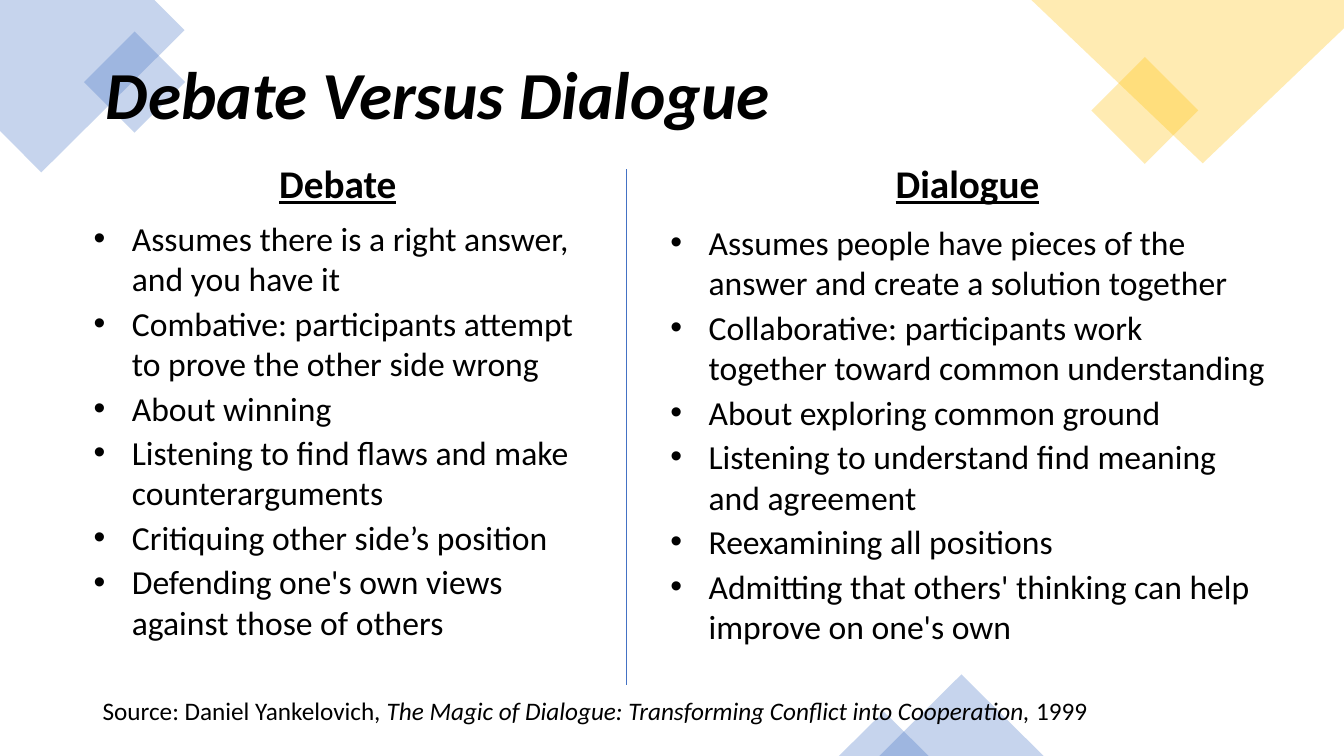
from dataclasses import dataclass

from lxml import etree
from pptx import Presentation
from pptx.dml.color import RGBColor
from pptx.enum.shapes import MSO_CONNECTOR, MSO_SHAPE
from pptx.enum.text import MSO_ANCHOR, MSO_AUTO_SIZE, PP_ALIGN
from pptx.oxml.ns import qn
from pptx.util import Inches, Pt

RECTANGLE = MSO_SHAPE.RECTANGLE
TRIANGLE = MSO_SHAPE.ISOSCELES_TRIANGLE
STRAIGHT = MSO_CONNECTOR.STRAIGHT
MIDDLE = MSO_ANCHOR.MIDDLE
GROW = MSO_AUTO_SIZE.SHAPE_TO_FIT_TEXT
FIXED = MSO_AUTO_SIZE.NONE
LEFT = PP_ALIGN.LEFT
CENTER = PP_ALIGN.CENTER

FONT = "Calibri"
BLACK = "000000"
BLUE = "4472C4"
GOLD = "FFC000"
OPACITY = 30
INDENT = Inches(0.38)

DEBATE = [
    "Assumes there is a right answer, and you have it",
    "Combative: participants attempt to prove the other side wrong",
    "About winning",
    "Listening to find flaws and make counterarguments",
    "Critiquing other side’s position",
    "Defending one's own views against those of others",
]
DIALOGUE = [
    "Assumes people have pieces of the answer and create a solution together",
    "Collaborative: participants work together toward common understanding",
    "About exploring common ground",
    "Listening to understand find meaning and agreement",
    "Reexamining all positions",
    "Admitting that others' thinking can help improve on one's own",
]
SOURCE = [
    ("Source: Daniel Yankelovich, ", False),
    ("The Magic of Dialogue: Transforming Conflict into Cooperation, ", True),
    ("1999", False),
]


@dataclass
class Box:
    left: int
    top: int
    width: int
    height: int

    def point(self, across, down):
        return (round(self.left + self.width * across / 100),
                round(self.top + self.height * down / 100))

    def share(self, across, down, width, height):
        return Box(*self.point(across, down),
                   round(self.width * width / 100),
                   round(self.height * height / 100))

    def frame(self):
        return self.left, self.top, self.width, self.height


def color(value):
    return RGBColor.from_string(value)


def tint(shape, value):
    shape.shadow.inherit = False
    shape.line.fill.background()
    shape.fill.solid()
    shape.fill.fore_color.rgb = color(value)
    tone = shape.element.spPr.find(qn("a:solidFill"))[0]
    etree.SubElement(tone, qn("a:alpha")).set("val", str(OPACITY * 1000))


def style(span, size, bold=False, italic=False, underline=False):
    span.font.name = FONT
    span.font.size = Pt(size)
    span.font.color.rgb = color(BLACK)
    span.font.bold = bold
    span.font.italic = italic
    span.font.underline = underline


def add_bullet(para):
    properties = para._p.get_or_add_pPr()
    properties.set("marL", str(INDENT))
    properties.set("indent", str(-INDENT))
    etree.SubElement(properties, qn("a:buFont")).set("typeface", "Arial")
    etree.SubElement(properties, qn("a:buChar")).set("char", "•")


def draw_corner(page, box, points, diamond, value):
    start, *others = [box.point(*point) for point in points]
    builder = page.shapes.build_freeform(*start)
    builder.add_line_segments(others, close=True)
    tint(builder.convert_to_shape(), value)
    square = page.shapes.add_shape(RECTANGLE, *diamond.frame())
    square.rotation = 315
    tint(square, value)


def draw_peaks(page, boxes):
    for box in boxes:
        tint(page.shapes.add_shape(TRIANGLE, *box.frame()), BLUE)


def write_title(page, box):
    title = page.shapes.title
    title.left, title.top, title.width, title.height = box.frame()
    frame = title.text_frame
    frame.text = "Debate Versus Dialogue"
    frame.word_wrap = True
    frame.auto_size = FIXED
    frame.vertical_anchor = MIDDLE
    para = frame.paragraphs[0]
    para.alignment = LEFT
    para.line_spacing = 0.9
    para.space_before = Pt(10)
    style(para.runs[0], 48, bold=True, italic=True)
    title.element.getparent().append(title.element)


def write_column(page, box, heading, points, before, after):
    frame = page.shapes.add_textbox(*box.frame()).text_frame
    frame.word_wrap = True
    frame.auto_size = GROW
    frame.text = heading
    para = frame.paragraphs[0]
    para.alignment = CENTER
    para.line_spacing = 1.07
    para.space_after = Pt(8)
    style(para.runs[0], 28, bold=True, underline=True)
    for point in points:
        para = frame.add_paragraph()
        para.text = point
        para.space_before = Pt(before)
        para.space_after = Pt(after)
        add_bullet(para)
        style(para.runs[0], 24)


def write_source(page, box):
    frame = page.shapes.add_textbox(*box.frame()).text_frame
    frame.word_wrap = False
    frame.auto_size = GROW
    for text, italic in SOURCE:
        span = frame.paragraphs[0].add_run()
        span.text = text
        style(span, 18, italic=italic)


def draw_divider(page, box):
    line = page.shapes.add_connector(STRAIGHT, *box.point(0, 0), *box.point(0, 100))
    line.line.color.rgb = color(BLUE)
    line.line.width = Pt(0.5)
    etree.SubElement(line.element.spPr, qn("a:effectLst"))


def build_comparison(deck):
    page = deck.slides.add_slide(deck.slide_layouts[5])
    whole = Box(0, 0, deck.slide_width, deck.slide_height)
    draw_corner(page, whole.share(0, 0, 13.73, 22.8),
                [(0, 0), (83.6, 0), (100, 17.5), (22.4, 100), (0, 76)],
                whole.share(7.35, 6.13, 5.33, 9.47), BLUE)
    draw_corner(page, whole.share(76.74, 0, 23.26, 21.6),
                [(0, 0), (100, 0), (100, 17.3), (54.8, 100)],
                whole.share(82.37, 9.6, 5.63, 10), GOLD)
    draw_peaks(page, [whole.share(65.42, 89.2, 12.23, 10.8),
                      whole.share(62.42, 94.13, 6.68, 5.87)])
    write_column(page, whole.share(6.23, 20, 37.81, 72.13), "Debate", DEBATE, 0, 3)
    write_title(page, whole.share(7.13, 3.07, 86.27, 19.73))
    write_column(page, whole.share(49.14, 20, 45.69, 66.8), "Dialogue", DIALOGUE, 3, 0)
    write_source(page, whole.share(6.9, 91.33, 75.62, 5.33))
    draw_divider(page, whole.share(46.59, 22.4, 0, 68.27))


def main():
    deck = Presentation()
    deck.slide_width = Inches(13.33)
    deck.slide_height = Inches(7.5)
    build_comparison(deck)
    deck.save("out.pptx")


if __name__ == "__main__":
    main()
